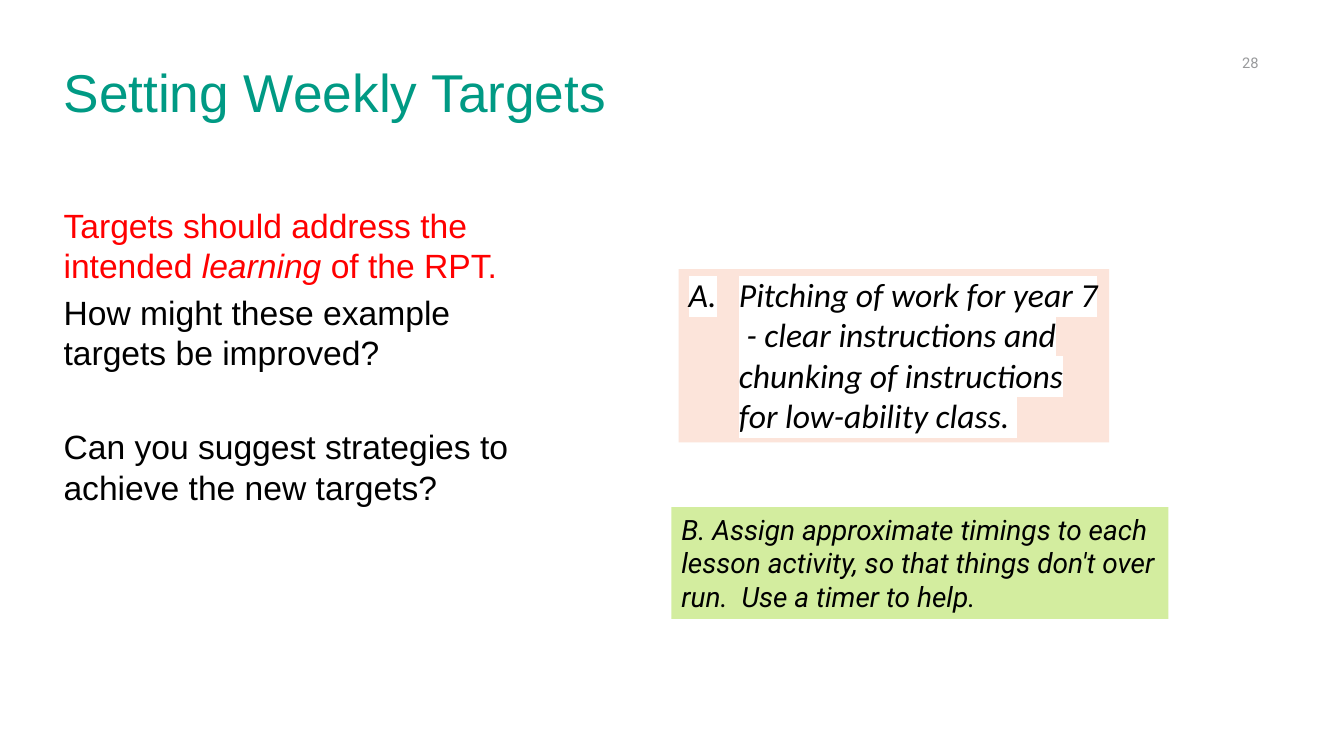
from dataclasses import dataclass

from lxml.etree import SubElement
from pptx import Presentation
from pptx.dml.color import RGBColor
from pptx.enum.shapes import MSO_SHAPE
from pptx.enum.text import MSO_ANCHOR, MSO_AUTO_SIZE, PP_ALIGN
from pptx.oxml.ns import qn
from pptx.util import Inches, Pt

WIDE, HIGH = Inches(13.33), Inches(7.5)
INK = {
    "teal": "009A84", "red": "FF0000", "black": "000000", "grey": "98999B",
    "white": "FFFFFF", "peach": "FCE4DA", "lime": "D3ED9F",
}


@dataclass(frozen=True)
class Area:
    """A place in percent of the slide's width and height."""
    left: float
    top: float
    width: float
    height: float

    def box(self) -> tuple[int, int, int, int]:
        return (int(WIDE * self.left / 100), int(HIGH * self.top / 100),
                int(WIDE * self.width / 100), int(HIGH * self.height / 100))


@dataclass(frozen=True)
class Style:
    face: str
    size: float
    ink: str
    slant: bool = False


@dataclass(frozen=True)
class Card:
    area: Area
    fill: str
    text: str
    style: Style
    listed: bool = False


@dataclass(frozen=True)
class Point:
    words: tuple[str, ...]  # every second piece is italic
    ink: str
    gap: float


CARDS = (
    Card(Area(50.49, 35.6, 32.03, 22.93), "peach",
         "Pitching of work for year 7  - clear instructions and chunking "
         "of instructions for low-ability class. ",
         Style("Calibri", 24, "black", True), listed=True),
    Card(Area(49.96, 67.07, 36.98, 14.8), "lime",
         "B. Assign approximate timings to each lesson activity, so that "
         "things don't over run.  Use a timer to help.",
         Style("Roboto", 20, "black", True)),
)
POINTS = (
    Point(("Targets should address the intended ", "learning", " of the RPT."),
          "red", 0),
    Point(("How might these example targets be improved?",), "black", 4.8),
    Point(("Can you suggest strategies to achieve the new targets?",),
          "black", 38.4),
)


def paint(run, style: Style) -> None:
    run.font.size = Pt(style.size)
    run.font.italic = style.slant
    run.font.color.rgb = RGBColor.from_string(INK[style.ink])
    run.font.name = style.face


def place(shape, area: Area) -> None:
    shape.left, shape.top, shape.width, shape.height = area.box()


def frame(shape, inset: float, anchor=MSO_ANCHOR.TOP):
    text = shape.text_frame
    text.word_wrap = True
    text.auto_size = MSO_AUTO_SIZE.NONE
    text.vertical_anchor = anchor
    text.margin_left = text.margin_right = Inches(inset)
    text.margin_top = text.margin_bottom = Inches(inset / 2)
    return text


def letter(para) -> None:
    """Number the paragraph with a capital and mark its text in white."""
    props = para._p.get_or_add_pPr()
    props.set("marL", str(Inches(0.5)))
    props.set("indent", str(-Inches(0.5)))
    SubElement(props, qn("a:buFont")).set("typeface", "+mj-lt")
    SubElement(props, qn("a:buAutoNum")).set("type", "alphaUcPeriod")
    for run in para.runs:
        fill = run._r.rPr.find(qn("a:solidFill"))
        mark = SubElement(run._r.rPr, qn("a:highlight"))
        SubElement(mark, qn("a:srgbClr")).set("val", INK["white"])
        fill.addnext(mark)


def draw_card(slide, card: Card) -> None:
    shape = slide.shapes.add_shape(MSO_SHAPE.RECTANGLE, *card.area.box())
    shape.shadow.inherit = False
    shape.fill.solid()
    shape.fill.fore_color.rgb = RGBColor.from_string(INK[card.fill])
    shape.line.fill.background()
    text = frame(shape, 0.1)
    text.text = card.text
    para = text.paragraphs[0]
    para.alignment = PP_ALIGN.LEFT
    paint(para.runs[0], card.style)
    if card.listed:
        letter(para)


def draw_point(para, point: Point) -> None:
    props = para._p.get_or_add_pPr()
    props.set("marL", "0")
    props.set("indent", "0")
    SubElement(props, qn("a:buNone"))
    para.line_spacing = Pt(28.8)
    para.space_before = Pt(point.gap)
    for spot, piece in enumerate(point.words):
        run = para.add_run()
        run.text = piece
        paint(run, Style("Arial", 24, point.ink, spot % 2 == 1))


def main() -> None:
    deck = Presentation()
    deck.slide_width, deck.slide_height = WIDE, HIGH
    slide = deck.slides.add_slide(deck.slide_layouts[1])

    # Title
    title = slide.shapes.title
    place(title, Area(4.73, 4.13, 90.55, 12.13))
    text = frame(title, 0, MSO_ANCHOR.BOTTOM)
    text.text = "Setting Weekly Targets"
    text.paragraphs[0].alignment = PP_ALIGN.LEFT
    paint(text.paragraphs[0].runs[0], Style("Arial", 38, "teal"))

    # Questions
    body = slide.placeholders[1]
    place(body, Area(4.73, 20.8, 33.91, 50.4))
    text = frame(body, 0)
    text.margin_top = Inches(0.47)
    for spot, point in enumerate(POINTS):
        draw_point(text.add_paragraph() if spot else text.paragraphs[0], point)

    # Page number
    page = slide.shapes.add_textbox(*Area(71.87, 5.6, 22.51, 5.33).box())
    text = frame(page, 0.1, MSO_ANCHOR.MIDDLE)
    text.text = "28"
    text.paragraphs[0].alignment = PP_ALIGN.RIGHT
    paint(text.paragraphs[0].runs[0], Style("Roboto", 10.5, "grey"))

    # Example targets
    for card in CARDS:
        draw_card(slide, card)

    deck.save("out.pptx")


if __name__ == "__main__":
    main()
